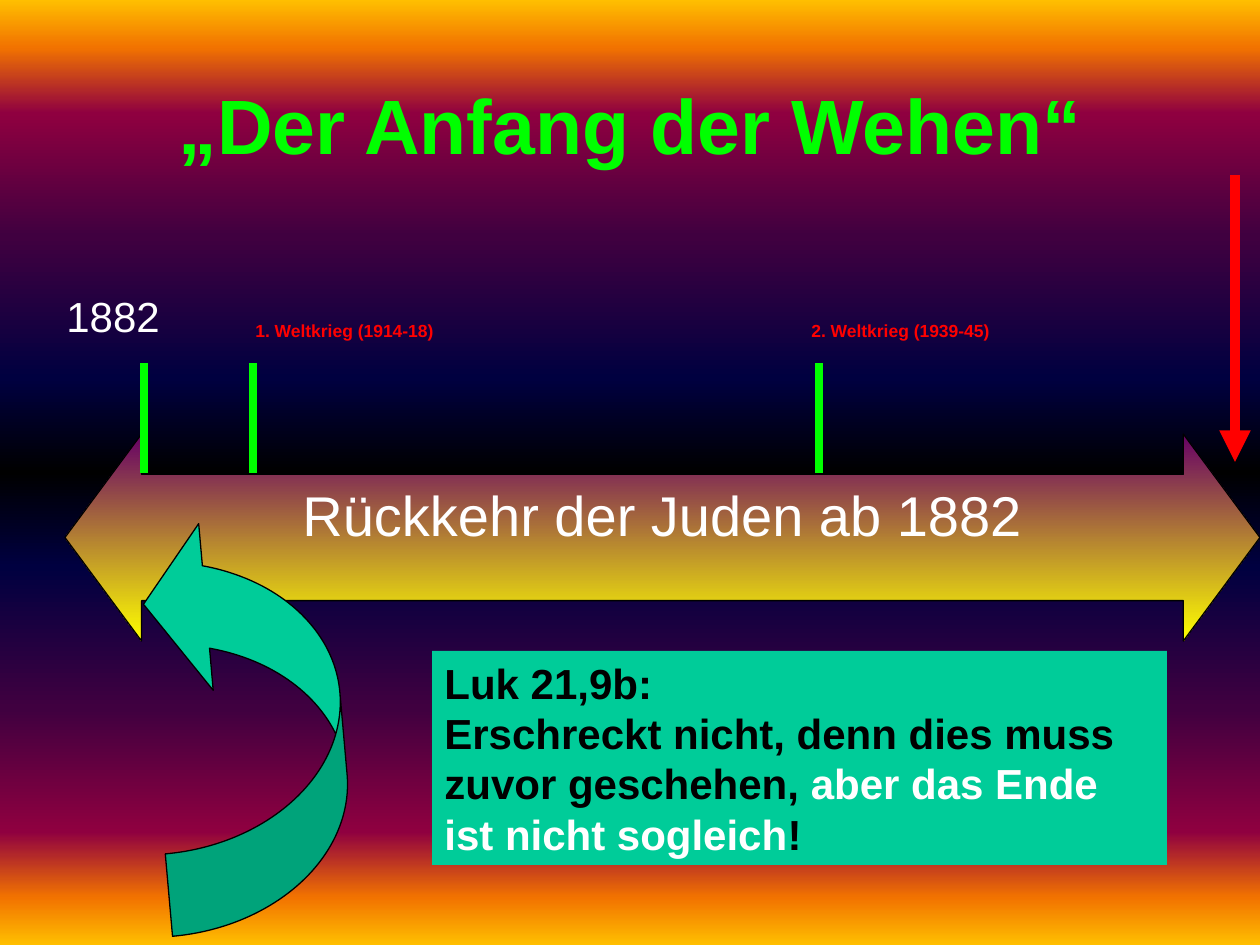
from lxml import etree
from pptx import Presentation
from pptx import util as u
from pptx.dml.color import RGBColor
from pptx.enum import shapes, text
from pptx.oxml.ns import qn

EMU_PER_PX = 914400 / 126
FONT = "Arial"

BLACK = RGBColor(0x00, 0x00, 0x00)
WHITE = RGBColor(0xFF, 0xFF, 0xFF)
RED = RGBColor(0xFF, 0x00, 0x00)
LIME = RGBColor(0x00, 0xFF, 0x00)
TEAL = RGBColor(0x00, 0xCC, 0x99)
YELLOW = RGBColor(0xFF, 0xFF, 0x00)
PURPLE = RGBColor(0x66, 0x00, 0x66)
AMBER = RGBColor(0xFF, 0xBF, 0x00)
ORANGE = RGBColor(0xF2, 0x73, 0x00)
CRIMSON = RGBColor(0x8F, 0x00, 0x40)
PLUM = RGBColor(0x40, 0x00, 0x40)
NAVY = RGBColor(0x00, 0x00, 0x40)

# The sunset runs from the edge to the middle and is mirrored below it
HALF_SUNSET = [(0, AMBER), (5, ORANGE), (12, CRIMSON), (25, PLUM), (40, NAVY)]
SUNSET = (HALF_SUNSET + [(50, BLACK)]
          + [(100 - stop, color) for stop, color in reversed(HALF_SUNSET)])


def px(*lengths):
    return [u.Emu(round(length * EMU_PER_PX)) for length in lengths]


def set_gradient(fill, element, stops):
    """Fill from top to bottom with (percent, colour) stops."""
    fill.gradient()
    fill.gradient_angle = 270
    stop_list = element.find(".//" + qn("a:gsLst"))
    for old_stop in list(stop_list):
        stop_list.remove(old_stop)
    for percent, color in stops:
        stop = etree.SubElement(stop_list, qn("a:gs"), pos=str(percent * 1000))
        etree.SubElement(stop, qn("a:srgbClr"), val=str(color))


def write(shape, paragraphs, size, bold=False, align=text.PP_ALIGN.LEFT,
          anchor=text.MSO_ANCHOR.TOP, wrap=True):
    """Write paragraphs, each a list of (wording, colour) spans."""
    frame = shape.text_frame
    frame.word_wrap = wrap
    frame.vertical_anchor = anchor
    if not wrap:
        frame.auto_size = text.MSO_AUTO_SIZE.SHAPE_TO_FIT_TEXT
    for index, spans in enumerate(paragraphs):
        para = frame.paragraphs[0] if index == 0 else frame.add_paragraph()
        para.alignment = align
        for wording, color in spans:
            span = para.add_run()
            span.text = wording
            font_format = {"name": FONT, "size": u.Pt(size), "bold": bold}
            for name, value in font_format.items():
                setattr(span.font, name, value)
            span.font.color.rgb = color


def add_label(page, area, wording, color, size, **options):
    box = page.shapes.add_textbox(*px(*area))
    write(box, [[(wording, color)]], size, **options)


def add_block(page, kind, area, fill=None, outlined=True, adjustments=()):
    block = page.shapes.add_shape(kind, *px(*area))
    block.shadow.inherit = False
    for index, value in enumerate(adjustments):
        block.adjustments[index] = value
    if fill is not None:
        block.fill.solid()
        block.fill.fore_color.rgb = fill
    if outlined:
        block.line.color.rgb = BLACK
        block.line.width = u.Pt(0.75)
    else:
        block.line.fill.background()
    return block


def add_vertical(page, x, top, bottom, color, width, arrow=False):
    line = page.shapes.add_connector(
        shapes.MSO_CONNECTOR.STRAIGHT, *px(x, top, x, bottom))
    line.line.color.rgb = color
    line.line.width = u.Pt(width)
    if arrow:
        outline = line._element.spPr.find(qn("a:ln"))
        etree.SubElement(outline, qn("a:tailEnd"), type="triangle")
    etree.SubElement(line._element.spPr, qn("a:effectLst"))


def main():
    deck = Presentation()
    deck.slide_width, deck.slide_height = px(1260, 945)
    page = deck.slides.add_slide(deck.slide_layouts[6])
    set_gradient(page.background.fill, page.element, SUNSET)

    # Title
    add_label(page, (95, 26, 1071, 195), "„Der Anfang der Wehen“", LIME, 44,
              bold=True, align=text.PP_ALIGN.CENTER,
              anchor=text.MSO_ANCHOR.MIDDLE)

    # Time bar
    time_bar = add_block(page, shapes.MSO_SHAPE.LEFT_RIGHT_ARROW,
                         (65, 434, 1195, 207), adjustments=(0.61, 0.37))
    set_gradient(time_bar.fill, time_bar.element, [(0, PURPLE), (100, YELLOW)])
    write(time_bar, [[("Rückkehr der Juden ab 1882", WHITE)]], 32,
          align=text.PP_ALIGN.CENTER)

    # Curved arrow back to the start
    curve = add_block(page, shapes.MSO_SHAPE.CURVED_LEFT_ARROW,
                      (154, 512, 188, 417), TEAL,
                      adjustments=(0.44, 0.89, 0.33))
    curve.rotation = 355
    curve.element.spPr.xfrm.set("flipV", "1")

    # Present day and year marks
    add_vertical(page, 1235, 175, 462, RED, 6, arrow=True)
    for x in (144, 253, 819):
        add_vertical(page, x, 363, 473, LIME, 4.5)

    # Year labels, each on a single line
    add_label(page, (54, 284, 122, 63), "1882", WHITE, 24, wrap=False)
    for left, wording in ((243, "1. Weltkrieg (1914-18)"),
                          (799, "2. Weltkrieg (1939-45)")):
        add_label(page, (left, 314, 203, 34), wording, RED, 10,
                  bold=True, wrap=False)

    # Verse
    verse = add_block(page, shapes.MSO_SHAPE.RECTANGLE, (432, 651, 735, 214),
                      TEAL, outlined=False)
    write(verse, [
        [("Luk 21,9b:", BLACK)],
        [("Erschreckt nicht, denn dies muss zuvor geschehen, ", BLACK),
         ("aber das Ende ist nicht sogleich", WHITE), ("!", BLACK)],
    ], 24, bold=True)

    deck.save("out.pptx")


if __name__ == "__main__":
    main()
